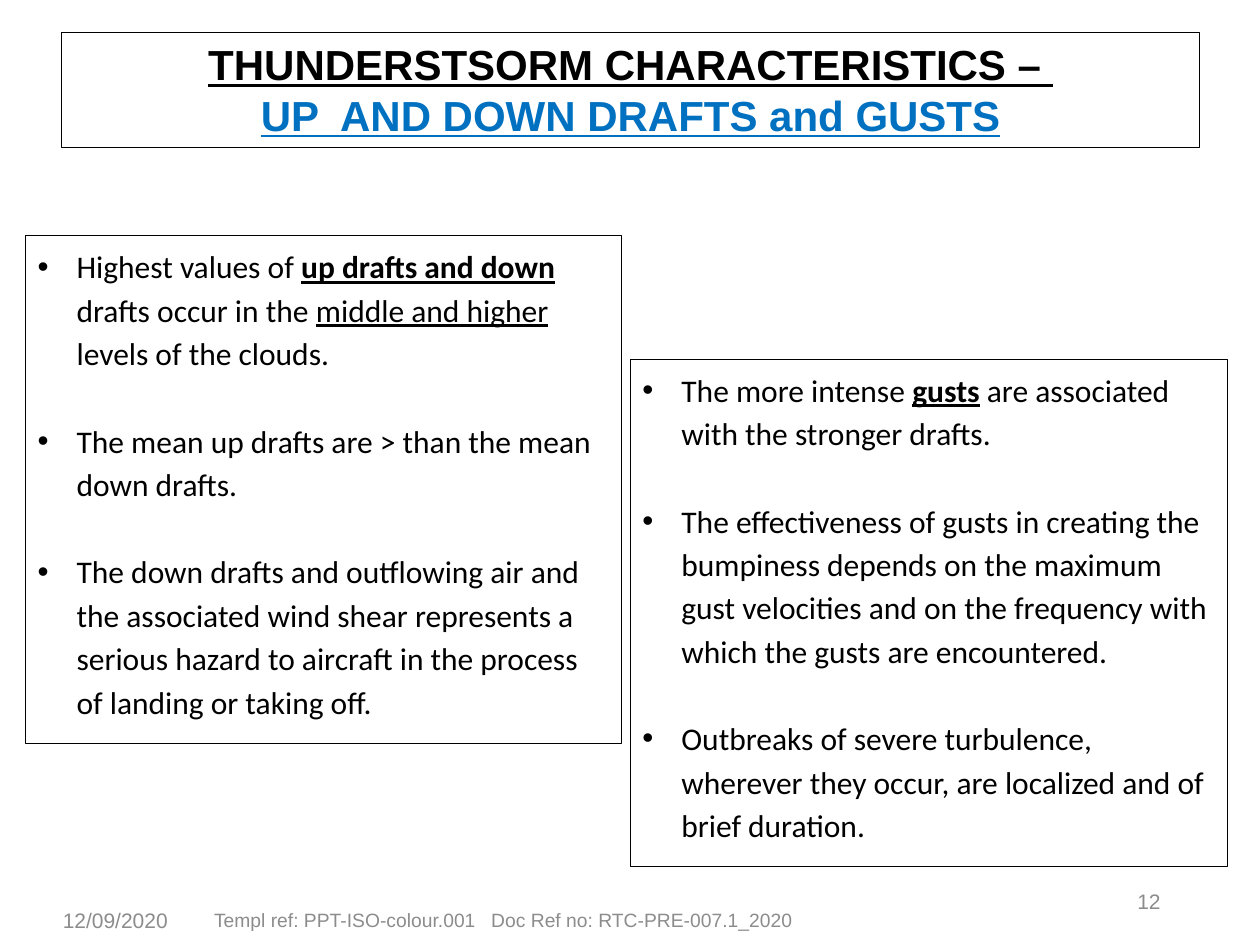
from lxml.etree import SubElement
from pptx import Presentation
from pptx.dml.color import RGBColor
from pptx.enum.shapes import MSO_SHAPE
from pptx.enum.text import MSO_ANCHOR, PP_ALIGN
from pptx.oxml.ns import qn
from pptx.util import Inches, Pt

BLACK = RGBColor(0x00, 0x00, 0x00)
WHITE = RGBColor(0xFF, 0xFF, 0xFF)
BLUE = RGBColor(0x00, 0x70, 0xC0)
GREY = RGBColor(0x8C, 0x8C, 0x8C)

STRONG = dict(bold=True, underline=True)
LINED = dict(underline=True)


def write(para, text, font="Arial", size=12, color=GREY, bold=False, underline=False):
    run = para.add_run()
    run.text = text
    run.font.name = font
    run.font.size = Pt(size)
    run.font.color.rgb = color
    run.font.bold = bold
    run.font.underline = underline


class Deck:
    """Holds the style and the current slide."""

    head = dict(size=24, **STRONG)
    body = dict(font="Calibri", size=18, color=BLACK)
    indent = Inches(0.31)
    gap = Pt(25)

    def __init__(self, slide):
        self.slide = slide

    def frame(self, place, width):
        """Add a white box with a thin black edge."""
        box = self.slide.shapes.add_shape(MSO_SHAPE.RECTANGLE, *map(Inches, place))
        box.shadow.inherit = False
        box.fill.solid()
        box.fill.fore_color.rgb = WHITE
        box.line.color.rgb = BLACK
        box.line.width = Pt(width)
        text = box.text_frame
        text.word_wrap = True
        text.vertical_anchor = MSO_ANCHOR.TOP
        return text

    def title(self, place, lines):
        text = self.frame(place, 0.75)
        for i, (line, color) in enumerate(lines):
            para = text.add_paragraph() if i else text.paragraphs[0]
            para.alignment = PP_ALIGN.CENTER
            write(para, line, color=color, **self.head)

    def list(self, place, items):
        """Each item is a list of (text, extra format) pairs."""
        text = self.frame(place, 0.5)
        for i, item in enumerate(items):
            para = text.add_paragraph() if i else text.paragraphs[0]
            self.bullet(para)
            para.alignment = PP_ALIGN.LEFT
            para.line_spacing = 1.15
            if i:
                para.space_before = self.gap
            for part, extra in item:
                write(para, part, **self.body, **extra)

    def bullet(self, para):
        props = para._p.get_or_add_pPr()
        props.set("marL", str(self.indent))
        props.set("indent", str(-self.indent))
        SubElement(props, qn("a:buFont"), typeface="Arial")
        SubElement(props, qn("a:buChar"), char="•")

    def footer(self, place, text, size=12, align=PP_ALIGN.LEFT, tab=None):
        box = self.slide.shapes.add_textbox(*map(Inches, place))
        box.text_frame.word_wrap = True
        box.text_frame.vertical_anchor = MSO_ANCHOR.MIDDLE
        para = box.text_frame.paragraphs[0]
        if tab:
            stops = SubElement(para._p.get_or_add_pPr(), qn("a:tabLst"))
            SubElement(stops, qn("a:tab"), pos=str(Inches(tab)), algn="l")
        para.alignment = align
        write(para, text, size=size)


def main():
    show = Presentation()
    show.slide_width, show.slide_height = Inches(10), Inches(7.5)
    deck = Deck(show.slides.add_slide(show.slide_layouts[6]))

    # Footer
    deck.footer((0.4, 7.1, 2.25, 0.4), "12/09/2020")
    deck.footer((1.6, 7.1, 6.61, 0.4),
                "Templ ref: PPT-ISO-colour.001\tDoc Ref no: RTC-PRE-007.1_2020",
                size=11, tab=2.2)
    deck.footer((7.06, 6.95, 2.25, 0.4), "12", align=PP_ALIGN.RIGHT)

    # Title
    deck.title((0.49, 0.26, 9.03, 0.91), [
        ("THUNDERSTSORM CHARACTERISTICS – ", BLACK),
        ("UP  AND DOWN DRAFTS and GUSTS", BLUE),
    ])

    # Drafts
    deck.list((0.2, 1.87, 4.73, 4.03), [
        [("Highest values of ", {}), ("up drafts and down ", STRONG),
         ("drafts occur in the ", {}), ("middle and higher", LINED),
         (" levels of the clouds.", {})],
        [("The mean up drafts are > than the mean down drafts.", {})],
        [("The down drafts and outflowing air and the associated wind shear "
          "represents a serious hazard to aircraft in the process of landing "
          "or taking off.", {})],
    ])

    # Gusts
    deck.list((5, 2.85, 4.74, 4.03), [
        [("The more intense ", {}), ("gusts", STRONG),
         (" are associated with the stronger drafts.", {})],
        [("The effectiveness of gusts in creating the bumpiness depends on the "
          "maximum gust velocities and on the frequency with which the gusts "
          "are encountered.", {})],
        [("Outbreaks of severe turbulence, wherever they occur, are localized "
          "and of brief duration.", {})],
    ])

    show.save("out.pptx")


if __name__ == "__main__":
    main()
